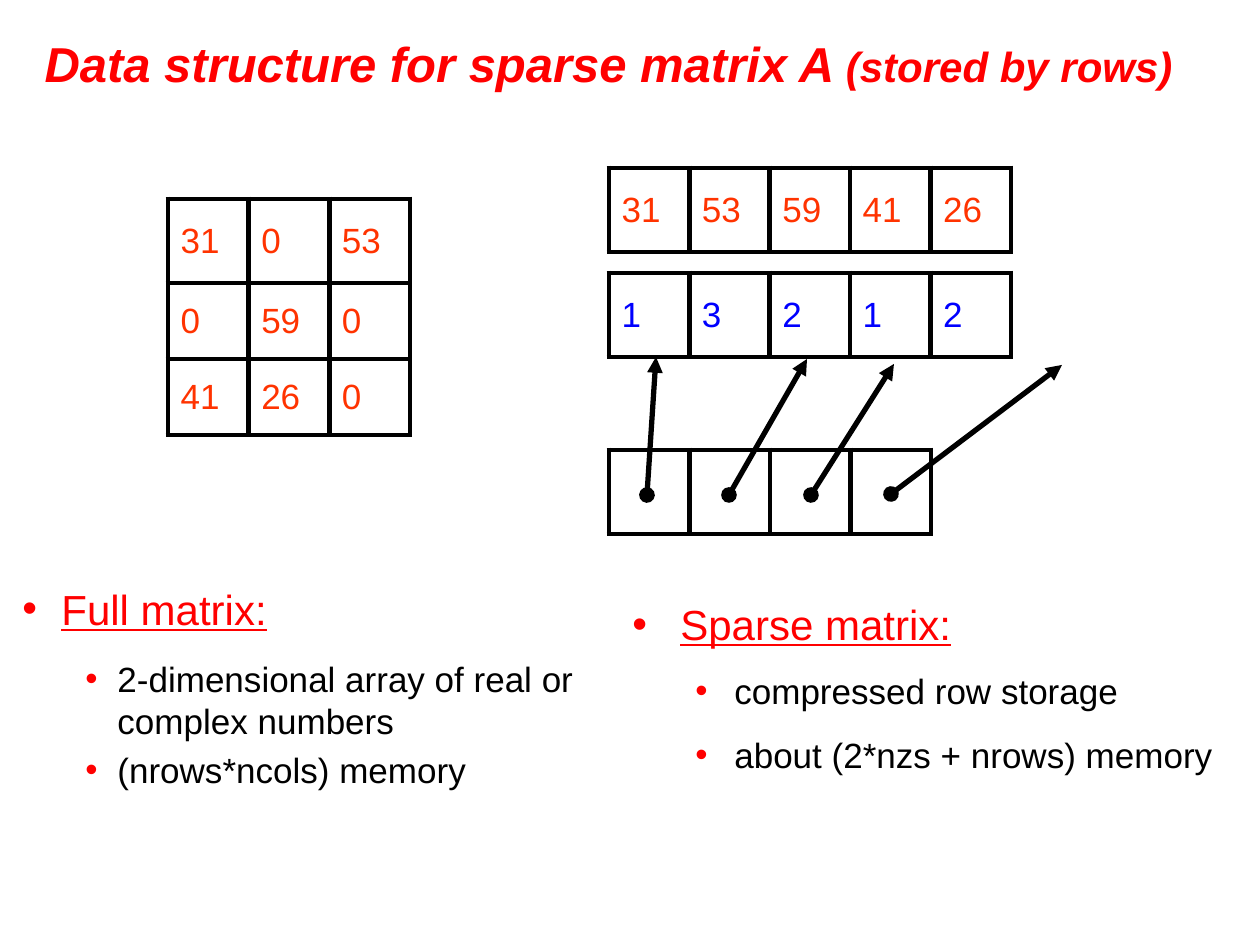
from lxml.etree import SubElement
from pptx import Presentation
from pptx.dml.color import RGBColor
from pptx.enum.shapes import MSO_CONNECTOR
from pptx.enum.text import MSO_ANCHOR, PP_ALIGN
from pptx.oxml.ns import qn
from pptx.util import Emu, Pt

PX = 914400 / 126
COLORS = {"red": "FF0000", "orange": "FF3300", "blue": "0000FF", "black": "000000"}


def px(*nums):
    return [Emu(round(n * PX)) for n in nums]


def write(para, text, size=20, color="black", bold=None, italic=None, under=None,
          before=4, lines=None, left=0, hang=0):
    """Add a run; a hang greater than zero also gives the paragraph a red bullet."""
    run = para.add_run()
    run.text = text
    font = run.font
    font.name, font.size = "Arial", Pt(size)
    font.bold, font.italic, font.underline = bold, italic, under
    font.color.rgb = RGBColor.from_string(COLORS[color])
    para.alignment = PP_ALIGN.LEFT
    para.space_before = Pt(before)
    if lines:
        para.line_spacing = lines
    if hang:
        props = para._p.get_or_add_pPr()
        margin, indent = px(left, -hang)
        props.set("marL", str(margin))
        props.set("indent", str(indent))
        tint = SubElement(props, qn("a:buClr"))
        SubElement(tint, qn("a:srgbClr"), val=COLORS["red"])
        SubElement(props, qn("a:buFont"), typeface="Arial")
        SubElement(props, qn("a:buChar"), char="•")


prs = Presentation()
prs.slide_width, prs.slide_height = px(1260, 945)
slide = prs.slides.add_slide(prs.slide_layouts[5])
shapes = slide.shapes

# Title
title = shapes.title
title.left, title.top, title.width, title.height = px(32, 23, 1176, 79)
title.text_frame.vertical_anchor = MSO_ANCHOR.MIDDLE
for text, size in [("Data structure for sparse matrix A ", 28), ("(stored by rows)", 24)]:
    write(title.text_frame.paragraphs[0], text, size=size, color="red",
          bold=True, italic=True, before=0)

# Full matrix, then the value, column and row-pointer arrays
grids = [
    (168, 199, 242, [84, 76, 76], "orange", [[31, 0, 53], [0, 59, 0], [41, 26, 0]]),
    (609, 168, 402, [84], "orange", [[31, 53, 59, 41, 26]]),
    (609, 273, 402, [84], "blue", [[1, 3, 2, 1, 2]]),
    (609, 450, 322, [84], "black", [[""] * 4]),
]
for x, y, width, heights, color, rows in grids:
    count = len(rows[0])
    table = shapes.add_table(len(rows), count, *px(x, y, width, sum(heights))).table
    table.first_row = table.horz_banding = False
    for col in table.columns:
        col.width, = px(width / count)
    for r, (height, row) in enumerate(zip(heights, rows)):
        table.rows[r].height, = px(height)
        for c, value in enumerate(row):
            cell = table.cell(r, c)
            cell.vertical_anchor = MSO_ANCHOR.MIDDLE
            if value != "":
                write(cell.text_frame.paragraphs[0], str(value), color=color)
            props = cell._tc.get_or_add_tcPr()
            for side in ("a:lnL", "a:lnR", "a:lnT", "a:lnB"):
                edge = SubElement(props, qn(side), w=str(Pt(3)))
                fill = SubElement(edge, qn("a:solidFill"))
                SubElement(fill, qn("a:srgbClr"), val=COLORS["black"])
            cell.fill.background()

# Bullet lists: heading, then (text, space before)
lists = [
    ((0, 577, 609, 272), "Full matrix:", (49, 39), (105, 32), None,
     [("2-dimensional array of real or complex numbers", 13.5),
      ("(nrows*ncols) memory", 4)]),
    ((620, 598, 640, 284), "Sparse matrix:", (48, 48), (102, 39), 0.9,
     [("compressed row storage", 14), ("about (2*nzs + nrows) memory", 15)]),
]
for area, head, outer, inner, lines, items in lists:
    frame = shapes.add_textbox(*px(*area)).text_frame
    frame.word_wrap = True
    write(frame.paragraphs[0], head, size=24, color="red", under=True, before=5,
          lines=lines, left=outer[0], hang=outer[1])
    for text, before in items:
        write(frame.add_paragraph(), text, before=before, lines=lines,
              left=inner[0], hang=inner[1])

# Pointers from the row array into the column array
arrows = [(647, 495, 656, 357), (729, 495, 807, 359),
          (811, 495, 894, 364), (891, 494, 1062, 365)]
for ends in arrows:
    arrow = shapes.add_connector(MSO_CONNECTOR.STRAIGHT, *px(*ends))
    arrow.line.width = Pt(3)
    arrow.line.color.rgb = RGBColor.from_string(COLORS["black"])
    line = arrow.line._get_or_add_ln()
    SubElement(line, qn("a:headEnd"), type="oval")
    SubElement(line, qn("a:tailEnd"), type="triangle")
    SubElement(arrow._element.spPr, qn("a:effectLst"))

prs.save("out.pptx")
